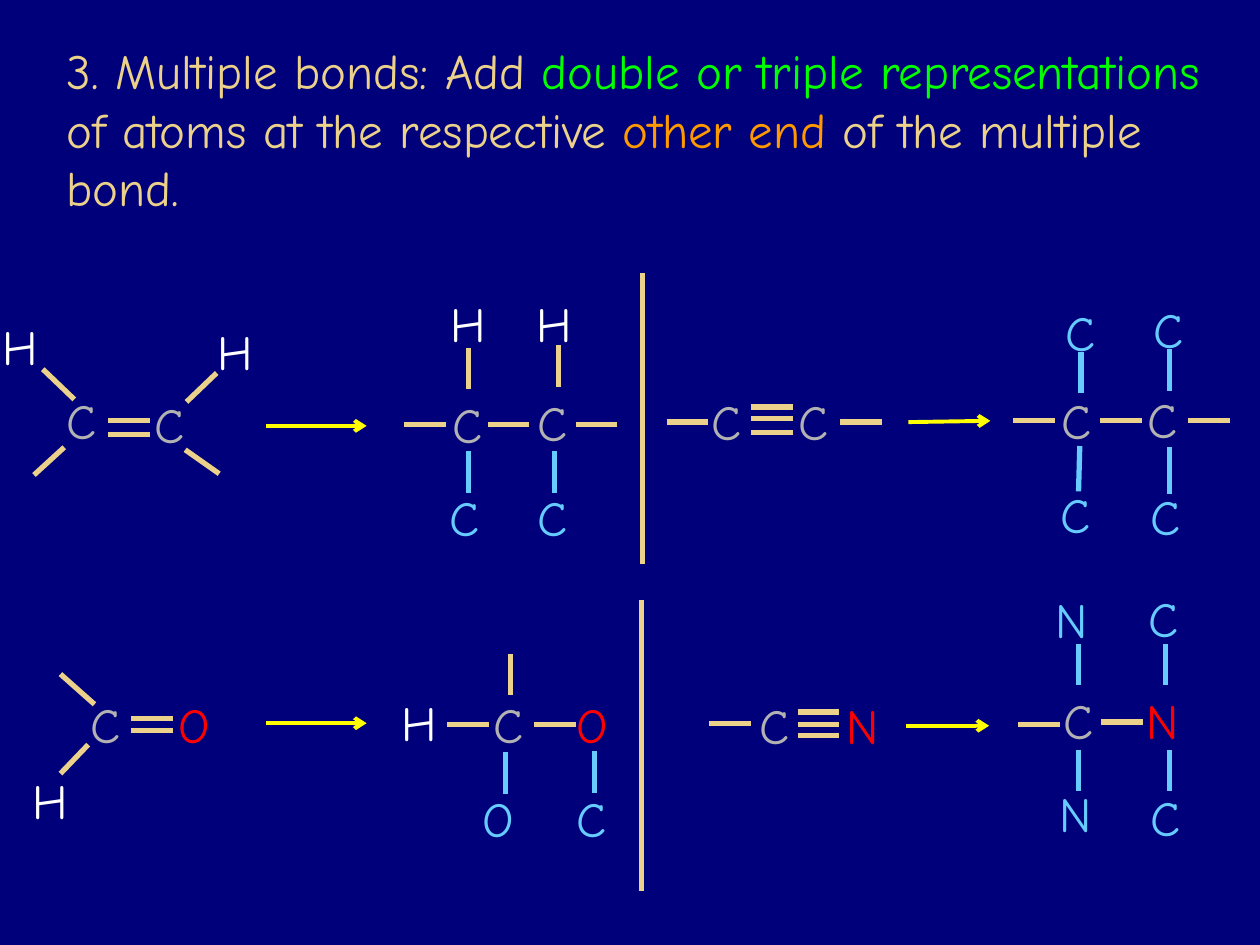
from dataclasses import dataclass

from lxml import etree
from pptx import Presentation
from pptx.dml.color import RGBColor
from pptx.enum.shapes import MSO_CONNECTOR
from pptx.enum.text import MSO_AUTO_SIZE
from pptx.oxml.ns import qn
from pptx.util import Pt

STRAIGHT = MSO_CONNECTOR.STRAIGHT
GROW = MSO_AUTO_SIZE.SHAPE_TO_FIT_TEXT
PX = 9144
BOND = 33


@dataclass(frozen=True)
class Theme:
    """Colours and type sizes of the slide."""

    navy: str = "00007A"
    sand: str = "EBD189"
    green: str = "00FF00"
    orange: str = "FF9900"
    gray: str = "B2B2B2"
    white: str = "FFFFFF"
    sky: str = "66CCFF"
    red: str = "FF0000"
    yellow: str = "FFFF00"
    font: str = "Comic Neue"
    size: int = 28
    bond_width: float = 3
    arrow_width: float = 2.25


THEME = Theme()


def across(x, y):
    """Return the ends of a horizontal bond."""
    return x, y, x + BOND, y


def down(x, y, length=BOND):
    """Return the ends of a vertical bond."""
    return x, y, x, y + length


ALKENE = {
    "atoms": [
        ("H", THEME.white, -8, 29, 61), ("H", THEME.white, 163, 33, 61),
        ("C", THEME.gray, 43, 88, 84), ("C", THEME.gray, 113, 91, 84),
        ("C", THEME.gray, 349, 91, 84), ("C", THEME.gray, 417, 90, 84),
        ("H", THEME.white, 348, 11, 61), ("H", THEME.white, 416, 11, 61),
        ("C", THEME.sky, 347, 165, 44), ("C", THEME.sky, 417, 165, 44),
    ],
    "bonds": [
        across(86, 117), across(86, 128),
        across(321, 120), across(387, 120), across(457, 120),
        down(372, 59), down(443, 57),
        (34, 76, 59, 100), (51, 138, 27, 160),
        (147, 140, 174, 159), (172, 79, 148, 102),
    ],
    "added_bonds": [down(372, 141), down(440, 141)],
    "arrow": (211, 121, 291, 121),
}

ALKYNE = {
    "atoms": [
        ("C", THEME.gray, 45, 89, 84), ("C", THEME.gray, 114, 89, 84),
        ("C", THEME.gray, 323, 88, 84), ("C", THEME.gray, 391, 87, 84),
        ("C", THEME.sky, 326, 18, 46), ("C", THEME.sky, 396, 16, 46),
        ("C", THEME.sky, 322, 163, 44), ("C", THEME.sky, 393, 164, 44),
    ],
    "bonds": [
        across(19, 118), across(157, 118),
        across(86, 106), across(86, 115), across(86, 126),
        across(294, 117), across(363, 117), across(433, 117),
    ],
    "added_bonds": [
        down(348, 62), down(418, 60), down(418, 138, 37), (346, 173, 347, 137),
    ],
    "arrow": (211, 118, 276, 117),
}

CARBONYL = {
    "atoms": [
        ("H", THEME.white, 16, 131, 90), ("C", THEME.gray, 62, 70, 90),
        ("O", THEME.red, 132, 70, 90), ("H", THEME.white, 309, 69, 90),
        ("C", THEME.gray, 382, 70, 90), ("O", THEME.red, 448, 70, 54),
        ("O", THEME.sky, 373, 145, 90), ("C", THEME.sky, 448, 145, 53),
    ],
    "bonds": [
        across(104, 94), across(104, 104), across(355, 99), across(424, 99),
        down(405, 43), (48, 59, 75, 83), (48, 138, 70, 115),
    ],
    "added_bonds": [down(401, 121), down(472, 120)],
    "arrow": (211, 98, 291, 98),
}

NITRILE = {
    "atoms": [
        ("C", THEME.gray, 83, 71, 90), ("N", THEME.red, 152, 71, 90),
        ("C", THEME.gray, 324, 67, 52), ("N", THEME.red, 390, 67, 90),
        ("N", THEME.sky, 318, -13, 90), ("C", THEME.sky, 392, -14, 90),
        ("N", THEME.sky, 321, 141, 90), ("C", THEME.sky, 393, 144, 90),
    ],
    "bonds": [
        across(53, 98), across(123, 89), across(123, 99), across(123, 108),
        across(298, 99), across(364, 97),
    ],
    "added_bonds": [
        down(346, 35), down(415, 35), down(346, 119), down(418, 119),
    ],
    "arrow": (209, 100, 275, 100),
}


def add_text(page, box, pieces):
    """Write one paragraph of coloured pieces into a box."""
    frame = page.shapes.add_textbox(*(value * PX for value in box)).text_frame
    frame.word_wrap = True
    frame.auto_size = GROW
    for words, color in pieces:
        span = frame.paragraphs[0].add_run()
        span.text = words
        span.font.name = THEME.font
        span.font.size = Pt(THEME.size)
        span.font.color.rgb = RGBColor.from_string(color)


def add_line(page, origin, ends, color, width):
    """Draw a plain line whose ends are relative to the origin."""
    left, top = origin
    x1, y1, x2, y2 = ends
    points = (left + x1, top + y1, left + x2, top + y2)
    line = page.shapes.add_connector(STRAIGHT, *(value * PX for value in points))
    line.line.color.rgb = RGBColor.from_string(color)
    line.line.width = Pt(width)
    etree.SubElement(line._element.spPr, qn("a:effectLst"))
    return line


def add_arrow(page, origin, ends):
    """Draw a reaction arrow with an open head."""
    arrow = add_line(page, origin, ends, THEME.yellow, THEME.arrow_width)
    etree.SubElement(arrow.line._get_or_add_ln(), qn("a:tailEnd"), type="arrow")


def draw_heading(page, box):
    """Write the rule about multiple bonds."""
    add_text(page, box, [
        ("3. Multiple bonds: Add ", THEME.sand),
        ("double or triple representations", THEME.green),
        (" of atoms at the respective ", THEME.sand),
        ("other end", THEME.orange),
        (" of the multiple bond.", THEME.sand),
    ])


def draw_reaction(page, origin, reaction):
    """Draw a molecule, an arrow and its expanded form."""
    left, top = origin
    for symbol, color, x, y, width in reaction["atoms"]:
        add_text(page, (left + x, top + y, width, 57), [(symbol, color)])
    for key, color in (("bonds", THEME.sand), ("added_bonds", THEME.sky)):
        for ends in reaction[key]:
            add_line(page, origin, ends, color, THEME.bond_width)
    add_arrow(page, origin, reaction["arrow"])


def main():
    """Build the slide and save the deck."""
    deck = Presentation()
    deck.slide_width, deck.slide_height = 1000 * PX, 750 * PX
    page = deck.slides.add_slide(deck.slide_layouts[6])
    page.background.fill.solid()
    page.background.fill.fore_color.rgb = RGBColor.from_string(THEME.navy)
    draw_heading(page, (43, 27, 930, 150))
    rows = ((217, 510, ALKENE, ALKYNE), (476, 509, CARBONYL, NITRILE))
    for top, divider, left_reaction, right_reaction in rows:
        draw_reaction(page, (0, top), left_reaction)
        draw_reaction(page, (510, top), right_reaction)
        add_line(page, (divider, top), down(0, 0, 231), THEME.sand, THEME.bond_width)
    deck.save("out.pptx")


if __name__ == "__main__":
    main()
